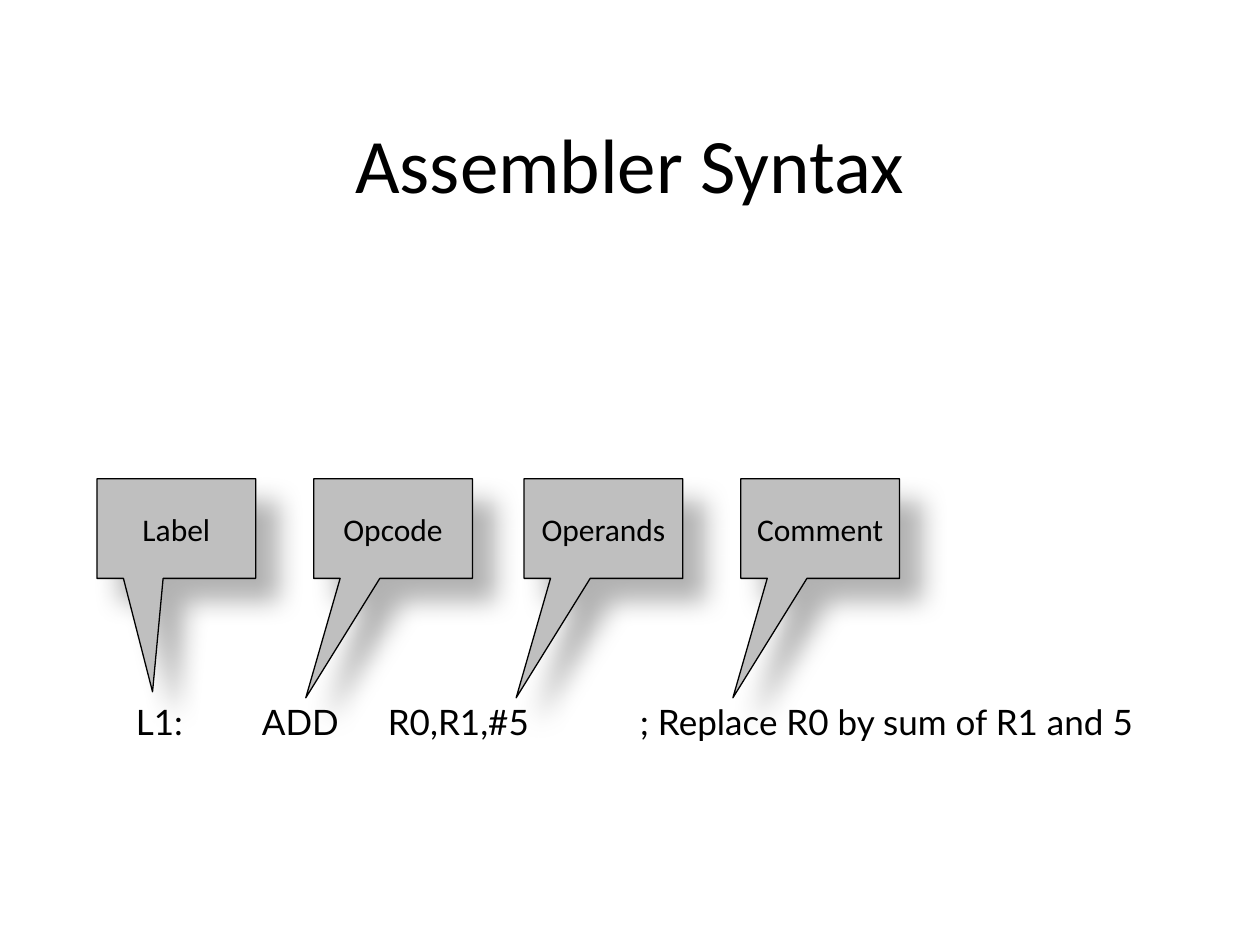
import pptx
import pptx.util
import pptx.dml.color
import pptx.enum.shapes
import pptx.enum.text
import pptx.oxml
import pptx.oxml.ns
import lxml.etree

Inches = pptx.util.Inches
Pt = pptx.util.Pt
COLORS = {"ink": "000000", "callout": "BFBFBF"}


def rgb(name):
    return pptx.dml.color.RGBColor.from_string(COLORS[name])


def style(para, size, font):
    para.font.size = Pt(size)
    para.font.name = font
    para.font.color.rgb = rgb("ink")


deck = pptx.Presentation()
deck.slide_width = Inches(10)
deck.slide_height = Inches(7.5)
page = deck.slides.add_slide(deck.slide_layouts[5])

title = page.shapes.title
title.left, title.top = Inches(0.75), Inches(0.67)
title.width, title.height = Inches(8.5), Inches(1.25)
title.text_frame.vertical_anchor = pptx.enum.text.MSO_ANCHOR.MIDDLE
para = title.text_frame.paragraphs[0]
para.text = "Assembler Syntax"
para.alignment = pptx.enum.text.PP_ALIGN.CENTER
style(para, 44, "Calibri")

code_box = page.shapes.add_textbox(Inches(0.98), Inches(5.51), Inches(8.24), Inches(0.44))
code_box.text_frame.word_wrap = True
code_box.text_frame.auto_size = pptx.enum.text.MSO_AUTO_SIZE.SHAPE_TO_FIT_TEXT
para = code_box.text_frame.paragraphs[0]
para.text = "L1: \tADD\tR0,R1,#5\t; Replace R0 by sum of R1 and 5"
tabs = lxml.etree.SubElement(para._p.get_or_add_pPr(), pptx.oxml.ns.qn("a:tabLst"))
for stop in (1, 2, 4):
    lxml.etree.SubElement(tabs, pptx.oxml.ns.qn("a:tab"), pos=str(Inches(stop)), algn="l")
style(para, 20, "Lato")

callouts = [
    ("Label", 0.77, -0.15, 1.64),
    ("Opcode", 2.49, -0.55, 1.7),
    ("Operands", 4.16, -0.55, 1.7),
    ("Comment", 5.88, -0.55, 1.7),
]
for label, left, tip_x, tip_y in callouts:
    callout = page.shapes.add_shape(
        pptx.enum.shapes.MSO_SHAPE.RECTANGULAR_CALLOUT,
        Inches(left), Inches(3.8), Inches(1.26), Inches(0.79))
    callout.adjustments[0] = tip_x
    callout.adjustments[1] = tip_y
    callout.fill.solid()
    callout.fill.fore_color.rgb = rgb("callout")
    callout.line.color.rgb = rgb("ink")
    callout.line.width = Pt(0.75)

    callout.shadow.inherit = False
    effects = callout._element.spPr.find(pptx.oxml.ns.qn("a:effectLst"))
    shadow = lxml.etree.SubElement(
        effects, pptx.oxml.ns.qn("a:outerShdw"), blurRad=str(Pt(15)),
        dist=str(Pt(18)), dir=str(45 * 60000), algn="tl", rotWithShape="0")
    shade = lxml.etree.SubElement(shadow, pptx.oxml.ns.qn("a:srgbClr"), val=COLORS["ink"])
    lxml.etree.SubElement(shade, pptx.oxml.ns.qn("a:alpha"), val="30000")

    callout.text_frame.vertical_anchor = pptx.enum.text.MSO_ANCHOR.MIDDLE
    para = callout.text_frame.paragraphs[0]
    para.text = label
    para.alignment = pptx.enum.text.PP_ALIGN.CENTER
    style(para, 18, "Calibri")

deck.save("out.pptx")
